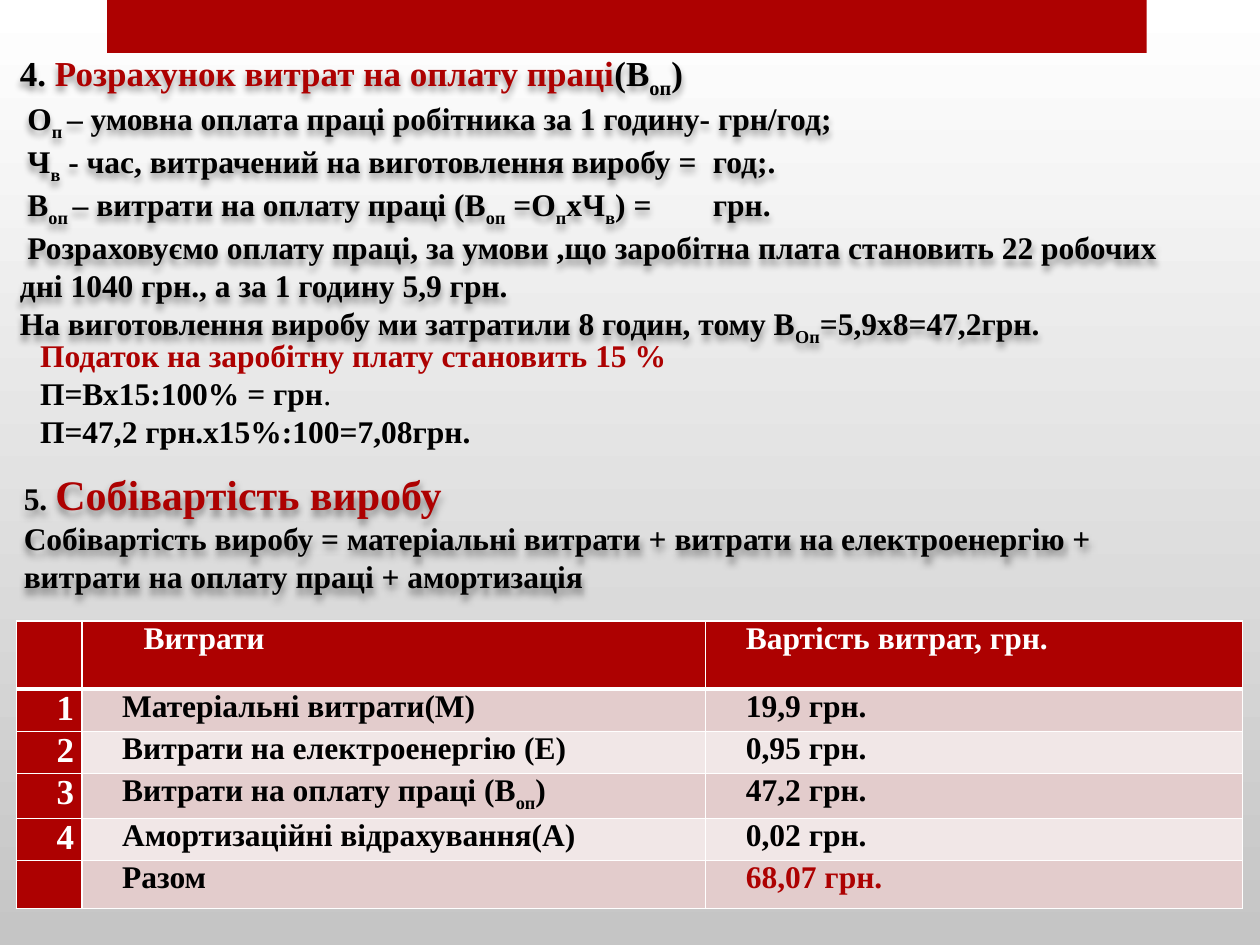
from dataclasses import dataclass

from lxml import etree
from pptx import Presentation
from pptx.dml.color import RGBColor
from pptx.enum.shapes import MSO_SHAPE
from pptx.oxml import parse_xml
from pptx.oxml.ns import nsdecls, qn
from pptx.util import Inches, Pt

RECTANGLE = MSO_SHAPE.RECTANGLE


@dataclass(frozen=True)
class Theme:
    """Colours, font and type sizes of the slide."""
    font: str = "Times New Roman"
    accent: str = "AD0101"
    ink: str = "000000"
    white: str = "FFFFFF"
    shade: str = "C5C5C5"
    bands: tuple = ("E3CCCC", "F1E7E7")
    body: int = 18
    lead: int = 20
    title: int = 24


T = Theme()
W, H = Inches(10), Inches(7.5)
RED = {"color": T.accent}
LEAD = {"size": T.lead}

LABOUR = [
    ([("4. ", LEAD), ("Розрахунок витрат на оплату праці", {**LEAD, **RED}),
      ("(В_оп_)", LEAD)], {}),
    ([("О_п _– умовна оплата праці робітника за 1 годину- грн/год;", {})],
     {"indent": 0.6}),
    ([("Ч_в_ - час, витрачений на виготовлення виробу =\tгод;.", {})],
     {"indent": 0.6, "tab": 60}),
    ([("В_оп _– витрати на оплату праці (В_оп_ =О_п_хЧ_в_) =\tгрн.", {})],
     {"indent": 0.6, "tab": 53.9}),
    ([("Розраховуємо оплату праці, за умови ,що заробітна плата становить "
       "22 робочих дні 1040 грн., а за 1 годину 5,9 грн.", {})],
     {"indent": 0.6}),
    ([("На виготовлення виробу ми затратили 8 годин, тому "
       "В_Оп_=5,9х8=47,2грн.", {})], {}),
]
TAX = [
    ([("Податок на заробітну плату становить 15 %", RED)], {}),
    ([("П=Вх15:100% = грн", {}), (".", {"bold": False})], {}),
    ([("П=47,2 грн.х15%:100=7,08грн.", {})], {}),
]
COST = [
    ([("5. ", {}), ("Собівартість виробу", {**RED, "size": T.title})], {}),
    ([("Собівартість виробу = матеріальні витрати + витрати на "
       "електроенергію + витрати на оплату праці + амортизація", {})], {}),
]
COSTS = [
    ("", "Витрати", "Вартість витрат, грн."),
    ("1", "Матеріальні витрати(М)", "19,9 грн."),
    ("2", "Витрати на електроенергію (Е)", "0,95 грн."),
    ("3", "Витрати на оплату праці (В_оп_)", "47,2 грн."),
    ("4", "Амортизаційні відрахування(А)", "0,02 грн."),
    ("", "Разом", "68,07 грн."),
]


def cols(n):
    """Return n hundredths of the slide width."""
    return int(W * n / 100)


def rows(n):
    """Return n hundredths of the slide height."""
    return int(H * n / 100)


def place(box):
    """Turn a box in grid units into slide lengths."""
    x, y, w, h = box
    return cols(x), rows(y), cols(w), rows(h)


def add_text(p, text, size=T.body, color=T.ink, bold=True):
    """Add text to a paragraph, with underscores enclosing subscripts."""
    for i, part in enumerate(text.split("_")):
        if part:
            r = p.add_run()
            r.text = part
            r.font.name, r.font.size, r.font.bold = T.font, Pt(size), bold
            r.font.color.rgb = RGBColor.from_string(color)
            if i % 2:
                r.font._element.set("baseline", "-25000")


def set_indent(p, indent=0, margin=0, tab=None):
    """Set the first-line indent, left margin and tab stop of a paragraph."""
    pPr = p._p.get_or_add_pPr()
    pPr.set("marL", str(cols(margin)))
    pPr.set("indent", str(cols(indent)))
    if tab:
        tabs = etree.SubElement(pPr, qn("a:tabLst"))
        etree.SubElement(tabs, qn("a:tab"), pos=str(cols(tab)), algn="l")


def add_shadow(s):
    """Give the text of an unfilled box a soft shadow."""
    s._element.spPr.append(parse_xml(
        f'<a:effectLst {nsdecls("a")}><a:outerShdw blurRad="50800" '
        'dist="38100" dir="5400000" algn="t" rotWithShape="0">'
        '<a:srgbClr val="000000"><a:alpha val="40000"/></a:srgbClr>'
        '</a:outerShdw></a:effectLst>'))


def add_backdrop(s, box):
    """Draw the gradient background and the top bar."""
    fill = s.background.fill
    fill.gradient()
    fill.gradient_angle = 270
    for stop, color in zip(fill.gradient_stops, (T.white, T.shade)):
        stop.color.rgb = RGBColor.from_string(color)
    bar = s.shapes.add_shape(RECTANGLE, *place(box))
    bar.shadow.inherit = False
    bar.fill.solid()
    bar.fill.fore_color.rgb = RGBColor.from_string(T.accent)
    bar.line.fill.background()


def add_section(s, box, paragraphs, shadow=False):
    """Place a text section in its box."""
    sp = s.shapes.add_textbox(*place(box))
    tf = sp.text_frame
    tf.word_wrap = True
    for i, (runs, layout) in enumerate(paragraphs):
        p = tf.add_paragraph() if i else tf.paragraphs[0]
        set_indent(p, **layout)
        for text, fmt in runs:
            add_text(p, text, **fmt)
    if shadow:
        add_shadow(sp)


def style_cell(cell, fill, top, bottom):
    """Set the borders, fill and margins of a table cell."""
    tcPr = cell._tc.get_or_add_tcPr()
    for side, width in (("L", 1), ("R", 1), ("T", top), ("B", bottom)):
        tcPr.append(parse_xml(
            f'<a:ln{side} {nsdecls("a")} w="{Pt(width)}"><a:solidFill>'
            f'<a:srgbClr val="{T.white}"/></a:solidFill></a:ln{side}>'))
    cell.fill.solid()
    cell.fill.fore_color.rgb = RGBColor.from_string(fill)
    cell.margin_left = cell.margin_right = cols(0.7)
    cell.margin_top = cell.margin_bottom = 0


def add_costs(s, box, widths, heights):
    """Place the cost table in its box."""
    table = s.shapes.add_table(len(heights), len(widths), *place(box)).table
    for column, width in zip(table.columns, widths):
        column.width = cols(width)
    for i, (row, height) in enumerate(zip(table.rows, heights)):
        row.height = rows(height)
        for j, cell in enumerate(row.cells):
            head = i == 0 or j == 0
            total = i == len(heights) - 1 and j == 2
            style_cell(cell, T.accent if head else T.bands[(i - 1) % 2],
                       3 if i == 1 else 1, 3 if i == 0 else 1)
            p = cell.text_frame.paragraphs[0]
            set_indent(p, 2.5, 1.7 if (i, j) == (0, 1) else 0)
            color = T.white if head else T.accent if total else T.ink
            add_text(p, COSTS[i][j], color=color,
                     size=T.body if j else T.lead)


def main():
    """Build the slide and save it."""
    prs = Presentation()
    prs.slide_width, prs.slide_height = W, H
    s = prs.slides.add_slide(prs.slide_layouts[6])
    add_backdrop(s, (8.5, 0, 82.5, 5.6))
    add_section(s, (0.6, 4.8, 96, 30.13), LABOUR, shadow=True)
    add_section(s, (2.2, 34.93, 92.8, 17.47), TAX)
    add_section(s, (0.9, 48.93, 96.1, 18.8), COST, shadow=True)
    add_costs(s, (1.3, 65.73, 97.3, 30.27), (5.2, 49.5, 42.6),
              (7.2, 4.4, 4.4, 4.8, 4.4, 5.07))
    prs.save("out.pptx")


if __name__ == "__main__":
    main()
